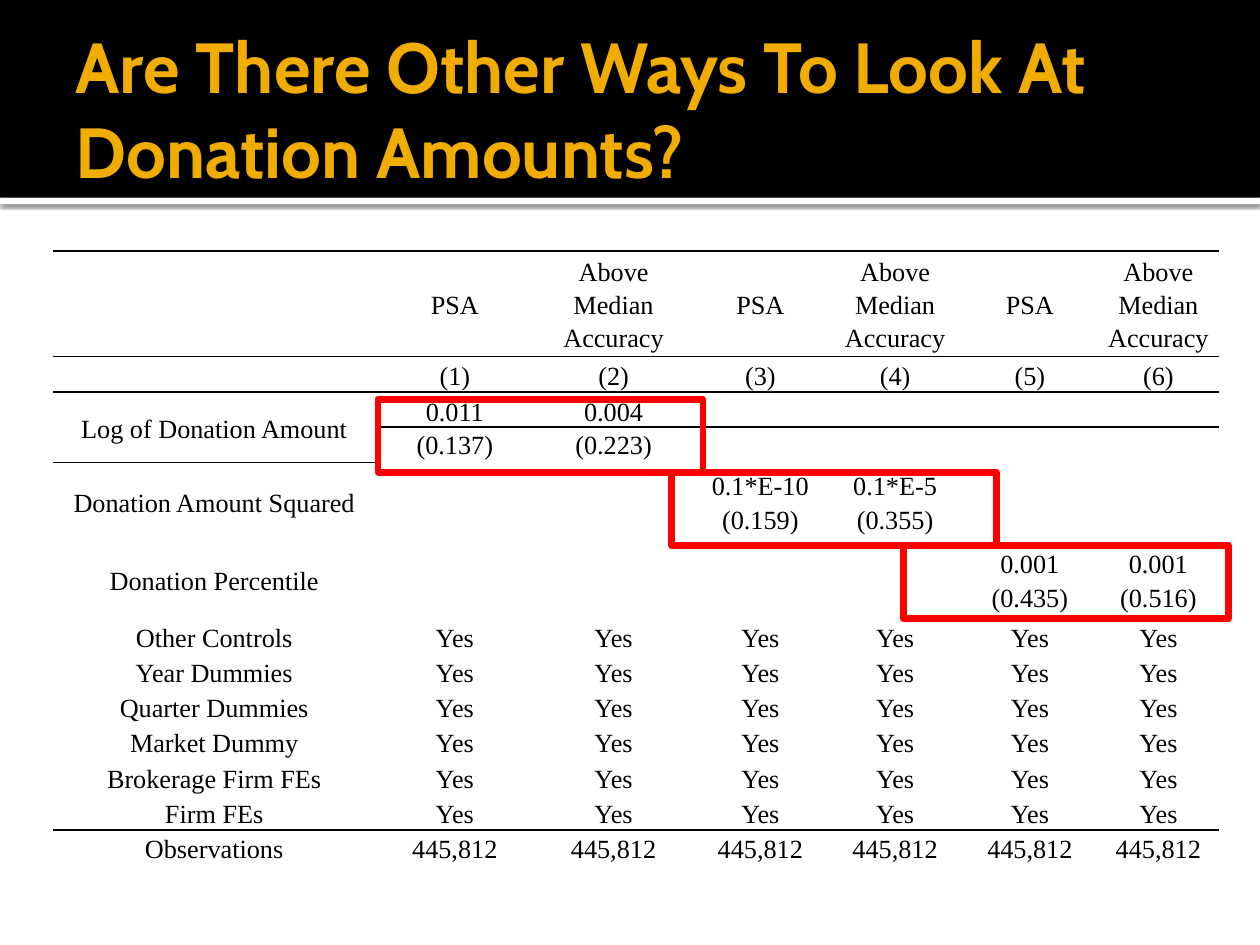
from lxml import etree
from pptx import Presentation
from pptx.dml.color import RGBColor
from pptx.enum import shapes, text
from pptx.oxml.ns import qn
from pptx.util import Inches, Pt

HUES = {"ink": "000000", "paper": "FFFFFF", "gold": "F0AD00", "mark": "FF0000"}
SERIF = "Times New Roman"
SIZE = 15
PLAIN = "{2D5ABB26-0587-4C30-8999-92F81FD0307C}"
COLS = [2.56, 1.26, 1.26, 1.07, 1.07, 1.07, 0.97]
ROWS = [0.84] + [0.28] * 3 + [0.31] * 4 + [0.28] * 7
RULES = {0, 1, 2, 14}
TESTS = [
    ("Log of Donation Amount", 1, ["0.011", "0.004"], ["(0.137)", "(0.223)"]),
    ("Donation Amount Squared", 3, ["0.1*E-10", "0.1*E-5"], ["(0.159)", "(0.355)"]),
    ("Donation Percentile", 5, ["0.001", "0.001"], ["(0.435)", "(0.516)"]),
]
CHECKS = ["Other Controls", "Year Dummies", "Quarter Dummies", "Market Dummy",
          "Brokerage Firm FEs", "Firm FEs"]


def color(name):
    """Return the named colour."""
    return RGBColor.from_string(HUES[name])


def apply(obj, vals):
    """Set each attribute in a dict of format values."""
    for key, val in vals.items():
        setattr(obj, key, val)


def add_box(slide, box, fill=None, line=None):
    """Add a rectangle with an optional fill and outline."""
    shape = slide.shapes.add_shape(shapes.MSO_SHAPE.RECTANGLE, *map(Inches, box))
    shape.shadow.inherit = False
    if fill:
        shape.fill.solid()
        shape.fill.fore_color.rgb = color(fill)
    else:
        shape.fill.background()
    if line:
        shape.line.color.rgb = color(line)
        shape.line.width = Pt(3.78)
    else:
        shape.line.fill.background()
    return shape


def add_shade(shape):
    """Give a shape a soft shadow that falls downward."""
    effect = shape._element.spPr.find(qn("a:effectLst"))
    shade = etree.SubElement(effect, qn("a:outerShdw"), blurRad=str(Pt(2.5)),
                             dist=str(Pt(0.8)), dir="5400000", algn="tl", rotWithShape="0")
    hue = etree.SubElement(shade, qn("a:srgbClr"), val=HUES["ink"])
    etree.SubElement(hue, qn("a:alpha"), val="60000")


def add_title(slide, words):
    """Fill the title and bring it in front of its band."""
    title = slide.shapes.title
    apply(title, dict(zip(("left", "top", "width", "height"),
                          map(Inches, (0.5, 0.17, 9, 1.37)))))
    frame = title.text_frame
    frame.text = words
    apply(frame, {"word_wrap": True, "auto_size": text.MSO_AUTO_SIZE.NONE,
                  "vertical_anchor": text.MSO_ANCHOR.MIDDLE,
                  "margin_left": Inches(0.1), "margin_right": Inches(0.05),
                  "margin_top": Inches(0.05), "margin_bottom": Inches(0.05)})
    para = frame.paragraphs[0]
    para.alignment = text.PP_ALIGN.LEFT
    font = para.runs[0].font
    apply(font, {"name": "Cabin", "size": Pt(40.5), "bold": True})
    font.color.rgb = color("gold")
    slide.shapes._spTree.append(title._element)


def add_rule(cell, side):
    """Draw one black border of a cell."""
    line = etree.SubElement(cell._tc.get_or_add_tcPr(), qn("a:" + side), w=str(Pt(1)))
    fill = etree.SubElement(line, qn("a:solidFill"))
    etree.SubElement(fill, qn("a:srgbClr"), val=HUES["ink"])


def set_cell(cell, words, anchor):
    """Write and format one cell."""
    apply(cell, {"margin_left": Inches(0.07), "margin_right": Inches(0.07),
                 "margin_top": 0, "margin_bottom": 0, "vertical_anchor": anchor})
    cell.fill.background()
    para = cell.text_frame.paragraphs[0]
    apply(para, {"alignment": text.PP_ALIGN.CENTER, "line_spacing": 1.15})
    if words:
        run = para.add_run()
        run.text = words
        apply(run.font, {"name": SERIF, "size": Pt(SIZE)})
        run.font.color.rgb = color("ink")
    else:
        etree.SubElement(para._p, qn("a:endParaRPr"), sz=str(SIZE * 100))


def make_rows():
    """Lay out the words of the table, row by row."""
    rows = [[""] + ["PSA", "Above Median Accuracy"] * 3,
            [""] + [f"({num})" for num in range(1, 7)]]
    for name, col, coefs, probs in TESTS:
        for label, pair in ((name, coefs), ("", probs)):
            row = [label] + [""] * 6
            row[col:col + 2] = pair
            rows.append(row)
    rows += [[name] + ["Yes"] * 6 for name in CHECKS]
    return rows + [["Observations"] + ["445,812"] * 6]


def add_grid(slide):
    """Add the table of results."""
    box = (0.42, 1.99, sum(COLS), sum(ROWS))
    frame = slide.shapes.add_table(len(ROWS), len(COLS), *map(Inches, box))
    grid = frame.table
    apply(grid, {"first_row": False, "horz_banding": False})
    grid._tbl.tblPr.find(qn("a:tableStyleId")).text = PLAIN
    for col, width in zip(grid.columns, COLS):
        col.width = Inches(width)
    for row, height in zip(grid.rows, ROWS):
        row.height = Inches(height)
    tests = range(2, 2 + 2 * len(TESTS))
    for top in tests[::2]:
        grid.cell(top, 0).merge(grid.cell(top + 1, 0))
    for r, row in enumerate(make_rows()):
        for c, words in enumerate(row):
            cell = grid.cell(r, c)
            anchor = text.MSO_ANCHOR.MIDDLE
            if c and r in tests:
                anchor = text.MSO_ANCHOR.TOP if r % 2 else text.MSO_ANCHOR.BOTTOM
            for edge, side in ((r, "lnT"), (r + 1, "lnB")):
                if edge in RULES:
                    add_rule(cell, side)
            set_cell(cell, words, anchor)


def main():
    """Build the slide and save it."""
    deck = Presentation()
    apply(deck, {"slide_width": Inches(10), "slide_height": Inches(7.5)})
    slide = deck.slides.add_slide(deck.slide_layouts[5])
    add_shade(add_box(slide, (0, 1.57, 10, 0.05), fill="paper"))
    add_box(slide, (0, 0, 10, 1.57), fill="ink")
    add_title(slide, "Are There Other Ways To Look At Donation Amounts?")
    add_grid(slide)
    for step, left in enumerate((3, 5.33, 7.17)):
        add_box(slide, (left, 3.17 + 0.58 * step, 2.58, 0.58), line="mark")
    deck.save("out.pptx")


if __name__ == "__main__":
    main()
